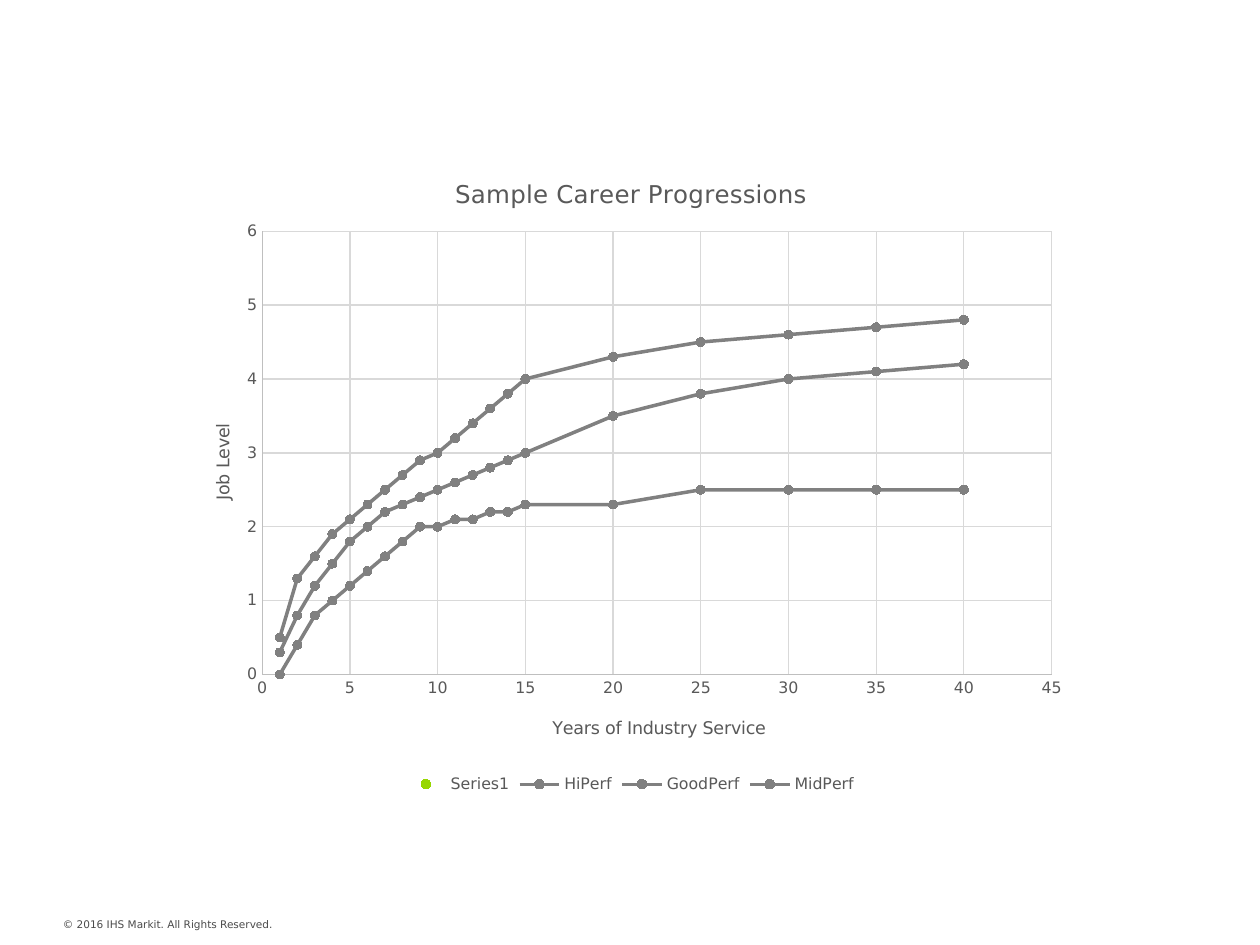
from dataclasses import dataclass
from typing import Any, Optional

from lxml.etree import SubElement
from pptx import Presentation
from pptx.chart.data import XyChartData
from pptx.dml.color import RGBColor
from pptx.enum.chart import (
    XL_CHART_TYPE as ChartType,
    XL_LEGEND_POSITION as LegendPosition,
    XL_MARKER_STYLE as MarkerStyle,
    XL_TICK_MARK as TickMark,
)
from pptx.oxml.ns import qn
from pptx.util import Inches, Pt

FONT = "DejaVu Sans"
COLORS = {
    "text": "595959", "footer": "4B4B4B", "axis": "BFBFBF", "grid": "D9D9D9",
    "curve": "808080", "levels": "97D700", "high": "00B140", "good": "B8B7B8",
    "mid": "008E89",
}
YEARS = [*range(1, 16), *range(20, 41, 5)]


@dataclass(frozen=True)
class Progression:
    name: str
    years: list[int]
    levels: list[float]
    color: str
    curve: Optional[str] = "curve"


@dataclass(frozen=True)
class AxisPlan:
    title: str
    maximum: int
    step: int
    place: dict[str, float]


PROGRESSIONS = [
    Progression("Series1", [40] * 6, list(range(6)), "levels", None),
    Progression("HiPerf", YEARS, [0.5, 1.3, 1.6, 1.9, 2.1, 2.3, 2.5, 2.7, 2.9, 3,
                                  3.2, 3.4, 3.6, 3.8, 4, 4.3, 4.5, 4.6, 4.7, 4.8], "high"),
    Progression("GoodPerf", YEARS, [0.3, 0.8, 1.2, 1.5, 1.8, 2, 2.2, 2.3, 2.4, 2.5,
                                    2.6, 2.7, 2.8, 2.9, 3, 3.5, 3.8, 4, 4.1, 4.2], "good"),
    Progression("MidPerf", YEARS, [0, 0.4, 0.8, 1, 1.2, 1.4, 1.6, 1.8, 2, 2,
                                   2.1, 2.1, 2.2, 2.2, 2.3, 2.3, 2.5, 2.5, 2.5, 2.5], "mid"),
]
SERVICE = AxisPlan("Years of Industry Service", 45, 5, {"x": 0.41, "y": 0.87})
JOB_LEVEL = AxisPlan("Job Level", 6, 1, {"x": 0.03, "y": 0.42})


def rgb(key: str) -> RGBColor:
    return RGBColor.from_string(COLORS[key])


def set_all(target: Any, values: dict[str, Any]) -> None:
    for key, value in values.items():
        setattr(target, key, value)


def set_font(font: Any, size: float, color: str = "text") -> None:
    set_all(font, {"name": FONT, "size": Pt(size), "bold": False})
    font.color.rgb = rgb(color)


def set_line(line: Any, color: str, width: float) -> None:
    line.color.rgb = rgb(color)
    line.width = Pt(width)


def place(element: Any, index: int, shares: dict[str, float], target: str = "") -> None:
    for old in element.findall(qn("c:layout")):
        element.remove(old)
    layout = SubElement(element, qn("c:layout"))
    element.insert(index, layout)
    manual = SubElement(layout, qn("c:manualLayout"))
    settings = {"layoutTarget": target} if target else {}
    settings |= {"xMode": "edge", "yMode": "edge"} | shares
    for tag, value in settings.items():
        SubElement(manual, qn(f"c:{tag}")).set("val", str(value))


def write_title(title: Any, text: str, size: float, shares: dict[str, float]) -> None:
    title.text_frame.text = text
    set_font(title.text_frame.paragraphs[0].runs[0].font, size)
    place(title._element, 1, shares)


def format_axis(axis: Any, plan: AxisPlan) -> None:
    set_all(axis, {
        "minimum_scale": 0, "maximum_scale": plan.maximum, "major_unit": plan.step,
        "has_major_gridlines": True, "has_minor_gridlines": False,
        "major_tick_mark": TickMark.NONE, "minor_tick_mark": TickMark.NONE,
    })
    set_font(axis.tick_labels.font, 9)
    set_line(axis.format.line, "axis", 0.75)
    set_line(axis.major_gridlines.format.line, "grid", 0.75)
    write_title(axis.axis_title, plan.title, 10, plan.place)


def format_series(series: Any, progression: Progression) -> None:
    set_all(series.marker, {"style": MarkerStyle.CIRCLE, "size": 5})
    series.marker.format.fill.solid()
    series.marker.format.fill.fore_color.rgb = rgb(progression.color)
    if progression.curve:
        set_line(series.format.line, progression.curve, 2)
        series.marker.format.line.color.rgb = rgb(progression.color)
        return
    series.format.line.fill.background()
    series.marker.format.line.fill.background()
    for index in range(len(progression.levels)):
        series.points[index].marker.style = MarkerStyle.NONE


def add_career_chart(slide: Any, width: int, height: int) -> None:
    data = XyChartData()
    for progression in PROGRESSIONS:
        points = data.add_series(progression.name)
        for year, level in zip(progression.years, progression.levels):
            points.add_data_point(year, level)
    chart = slide.shapes.add_chart(
        ChartType.XY_SCATTER, int(width * 0.144), int(height * 0.155),
        int(width * 0.712), int(height * 0.69), data).chart
    set_font(chart.font, 10)
    set_all(chart, {"has_title": True, "has_legend": True})
    write_title(chart.chart_title, "Sample Career Progressions", 14, {"x": 0.3, "y": 0.04})
    set_all(chart.legend, {"position": LegendPosition.BOTTOM, "include_in_layout": False})
    set_font(chart.legend.font, 9)
    format_axis(chart.category_axis, SERVICE)
    format_axis(chart.value_axis, JOB_LEVEL)
    chart.value_axis.axis_title.text_frame._txBody.find(qn("a:bodyPr")).set("rot", "-5400000")
    plot = chart.plots[0]
    plot.vary_by_categories = False
    for series, progression in zip(plot.series, PROGRESSIONS):
        format_series(series, progression)
    plot_area = chart._chartSpace.find(f".//{qn('c:plotArea')}")
    place(plot_area, 0, {"x": 0.09, "y": 0.13, "w": 0.88, "h": 0.68}, "inner")


def add_copyright(slide: Any, width: int, height: int) -> None:
    box = slide.shapes.add_textbox(
        int(width * 0.04), int(height * 0.965), int(width * 0.192), int(height * 0.027))
    box.text_frame.word_wrap = False
    box.text_frame.text = "© 2016 IHS Markit. All Rights Reserved."
    set_font(box.text_frame.paragraphs[0].runs[0].font, 6, "footer")


def main() -> None:
    deck = Presentation()
    set_all(deck, {"slide_width": Inches(10), "slide_height": Inches(7.5)})
    slide = deck.slides.add_slide(deck.slide_layouts[6])
    add_copyright(slide, deck.slide_width, deck.slide_height)
    add_career_chart(slide, deck.slide_width, deck.slide_height)
    deck.save("out.pptx")


if __name__ == "__main__":
    main()
